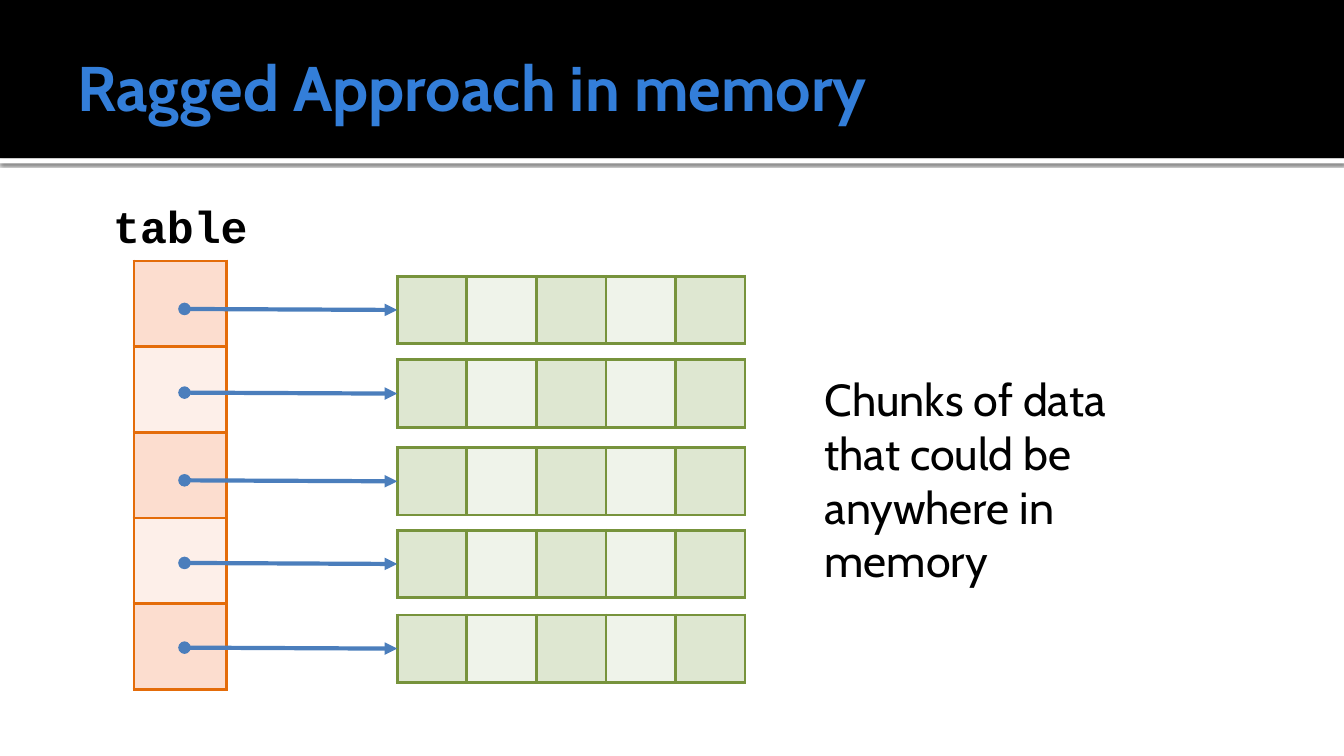
from lxml import etree
from pptx import Presentation
from pptx.dml.color import RGBColor
from pptx.enum.shapes import MSO_CONNECTOR, MSO_SHAPE
from pptx.enum.text import MSO_ANCHOR, PP_ALIGN
from pptx.oxml import parse_xml
from pptx.oxml.ns import nsdecls, qn
from pptx.util import Inches, Pt

RECTANGLE, STRAIGHT = MSO_SHAPE.RECTANGLE, MSO_CONNECTOR.STRAIGHT
TOP, MIDDLE = MSO_ANCHOR.TOP, MSO_ANCHOR.MIDDLE
LEFT, CENTER = PP_ALIGN.LEFT, PP_ALIGN.CENTER

BLACK = RGBColor(0x00, 0x00, 0x00)
WHITE = RGBColor(0xFF, 0xFF, 0xFF)
TITLE_BLUE = RGBColor(0x33, 0x7E, 0xD9)
ARROW_BLUE = RGBColor(0x4B, 0x7E, 0xBC)
ORANGE = RGBColor(0xE4, 0x6C, 0x0A)
ORANGE_BANDS = (RGBColor(0xFC, 0xDD, 0xCF), RGBColor(0xFD, 0xEF, 0xE9))
GREEN = RGBColor(0x77, 0x93, 0x3C)
GREEN_BANDS = (RGBColor(0xDE, 0xE7, 0xD1), RGBColor(0xEF, 0xF3, 0xEA))

# Content: text, position and size, font, points, bold, colour, alignment, anchor
TEXTS = [
    ("Ragged Approach in memory", (0.67, 0.17, 12, 1.37),
     "Cabin", 45, True, TITLE_BLUE, LEFT, MIDDLE),
    ("table", (0.83, 1.92, 1.92, 0.64),
     "Courier New", 32, True, BLACK, CENTER, TOP),
    ("Chunks of data that could be anywhere in memory", (8.08, 3.64, 3, 2.26),
     "Cabin", 32, False, BLACK, LEFT, TOP),
]
CHUNK_TOPS = [2.74, 3.57, 4.44, 5.26, 6.1]
CHUNK_LEFT, CHUNK_CELLS, CHUNK_CELL_WIDTH, CHUNK_HEIGHT = 3.94, 5, 0.69, 0.67
POINTER_LEFT, POINTER_TOP, POINTER_WIDTH, POINTER_HEIGHT = 1.33, 2.59, 0.92, 0.85
ARROW_START = 1.83

SHADOW = f"""<a:effectLst {nsdecls('a')}>
<a:outerShdw blurRad="{Pt(2.5)}" dist="{Pt(0.8)}" dir="5400000" algn="tl" rotWithShape="0">
<a:srgbClr val="000000"><a:alpha val="60000"/></a:srgbClr></a:outerShdw></a:effectLst>"""


def add_band(page, top, height, color):
    band = page.shapes.add_shape(RECTANGLE, 0, Inches(top), Inches(13.33), Inches(height))
    band.shadow.inherit = False
    band.fill.solid()
    band.fill.fore_color.rgb = color
    band.line.fill.background()
    return band


def add_text(page, text, place, font, size, bold, color, align, anchor):
    box = page.shapes.add_textbox(*map(Inches, place))
    frame = box.text_frame
    frame.word_wrap = True
    frame.vertical_anchor = anchor
    para = frame.paragraphs[0]
    para.text = text
    para.alignment = align
    para.font.name = font
    para.font.size = Pt(size)
    para.font.bold = bold
    para.font.color.rgb = color


def add_cells(page, left, top, rows, columns, width, height, bands, border):
    """Draw a grid with alternating fills and one border colour."""
    frame = page.shapes.add_table(rows, columns, Inches(left), Inches(top),
                                  Inches(width * columns), Inches(height * rows))
    grid = frame.table
    for column in grid.columns:
        column.width = Inches(width)
    for row in grid.rows:
        row.height = Inches(height)
    for index, cell in enumerate(grid.iter_cells()):
        properties = cell._tc.get_or_add_tcPr()
        for side in ("lnL", "lnR", "lnT", "lnB"):
            edge = etree.SubElement(properties, qn(f"a:{side}"), w=str(Pt(2.25)))
            fill = etree.SubElement(edge, qn("a:solidFill"))
            etree.SubElement(fill, qn("a:srgbClr"), val=str(border))
        cell.fill.solid()
        cell.fill.fore_color.rgb = bands[index % 2]


def add_pointer(page, y):
    arrow = page.shapes.add_connector(STRAIGHT, Inches(ARROW_START), Inches(y),
                                      Inches(CHUNK_LEFT), Inches(y + 0.01))
    arrow.line.color.rgb = ARROW_BLUE
    arrow.line.width = Pt(3)
    line = arrow.line._get_or_add_ln()
    etree.SubElement(line, qn("a:headEnd"), type="oval")
    etree.SubElement(line, qn("a:tailEnd"), type="triangle")
    etree.SubElement(arrow._element.spPr, qn("a:effectLst"))


def main():
    deck = Presentation()
    deck.slide_width, deck.slide_height = Inches(13.33), Inches(7.5)
    page = deck.slides.add_slide(deck.slide_layouts[6])

    # Header: shadowed white rule below a black band
    rule = add_band(page, 1.57, 0.05, WHITE)
    properties = rule._element.spPr
    properties.replace(properties.find(qn("a:effectLst")), parse_xml(SHADOW))
    add_band(page, 0, 1.57, BLACK)

    for text in TEXTS:
        add_text(page, *text)

    # Column of pointers, each leading to a chunk of data
    add_cells(page, POINTER_LEFT, POINTER_TOP, len(CHUNK_TOPS), 1,
              POINTER_WIDTH, POINTER_HEIGHT, ORANGE_BANDS, ORANGE)
    for top in CHUNK_TOPS:
        add_cells(page, CHUNK_LEFT, top, 1, CHUNK_CELLS,
                  CHUNK_CELL_WIDTH, CHUNK_HEIGHT, GREEN_BANDS, GREEN)
        add_pointer(page, top + CHUNK_HEIGHT / 2 - 0.01)

    deck.save("out.pptx")


if __name__ == "__main__":
    main()
